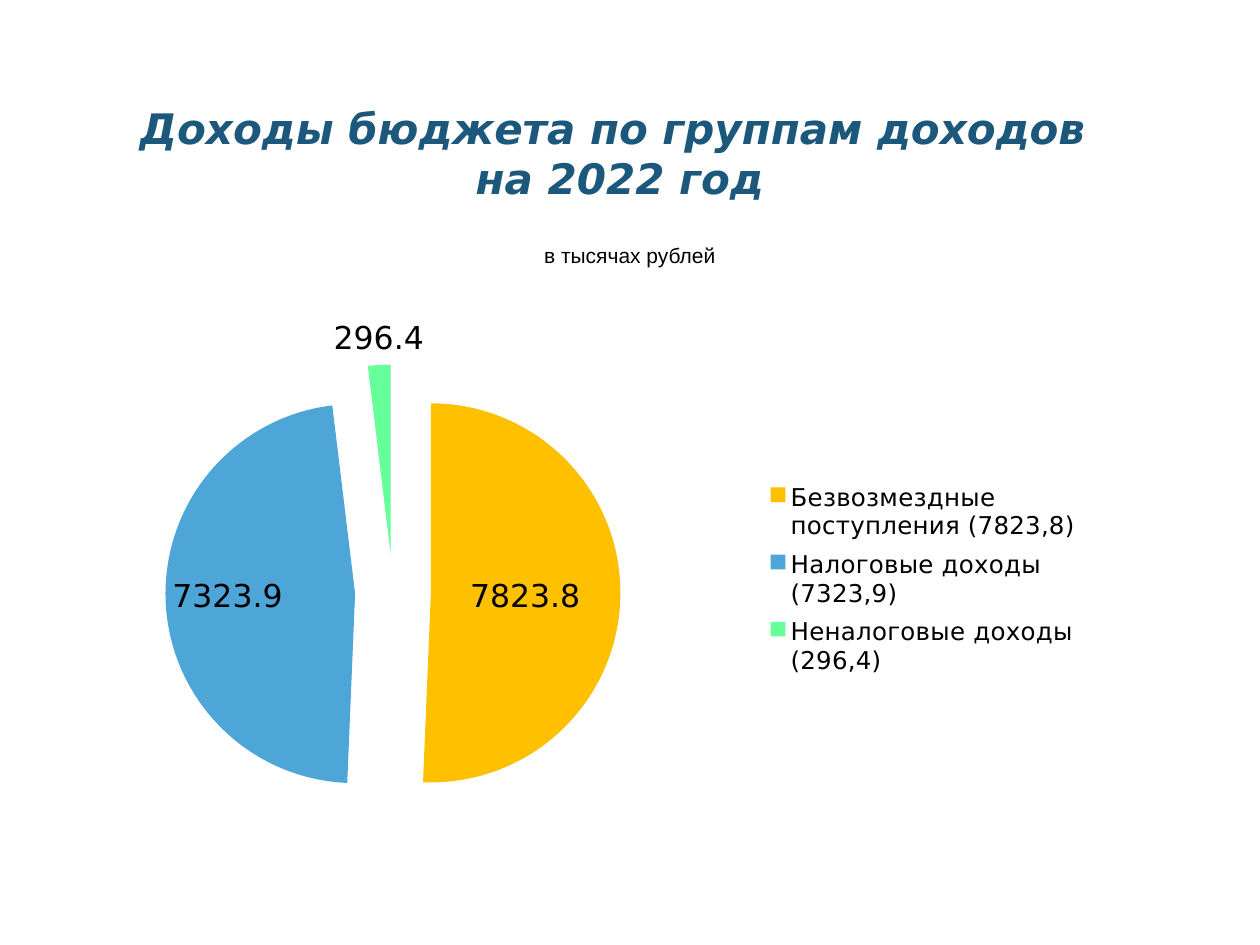
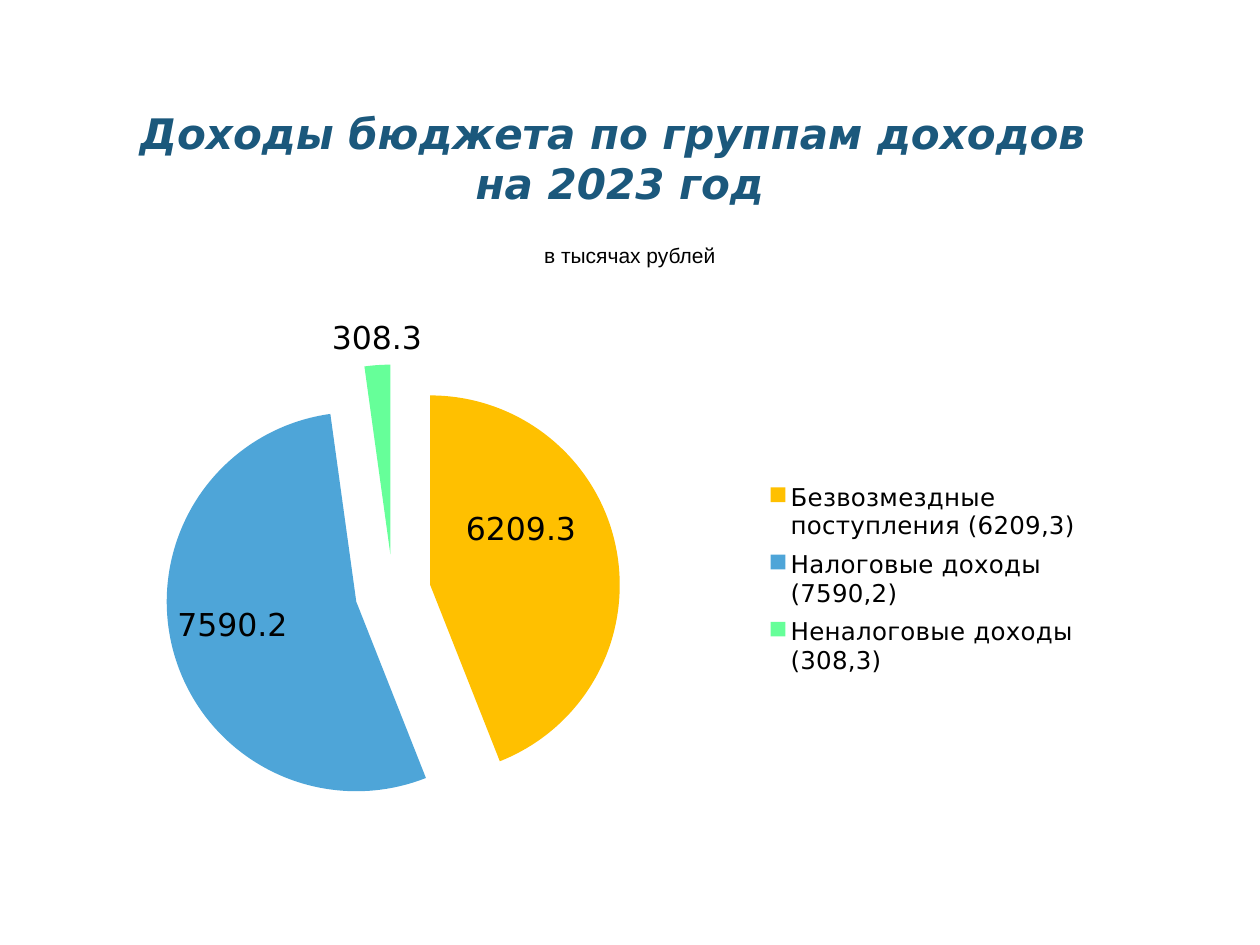
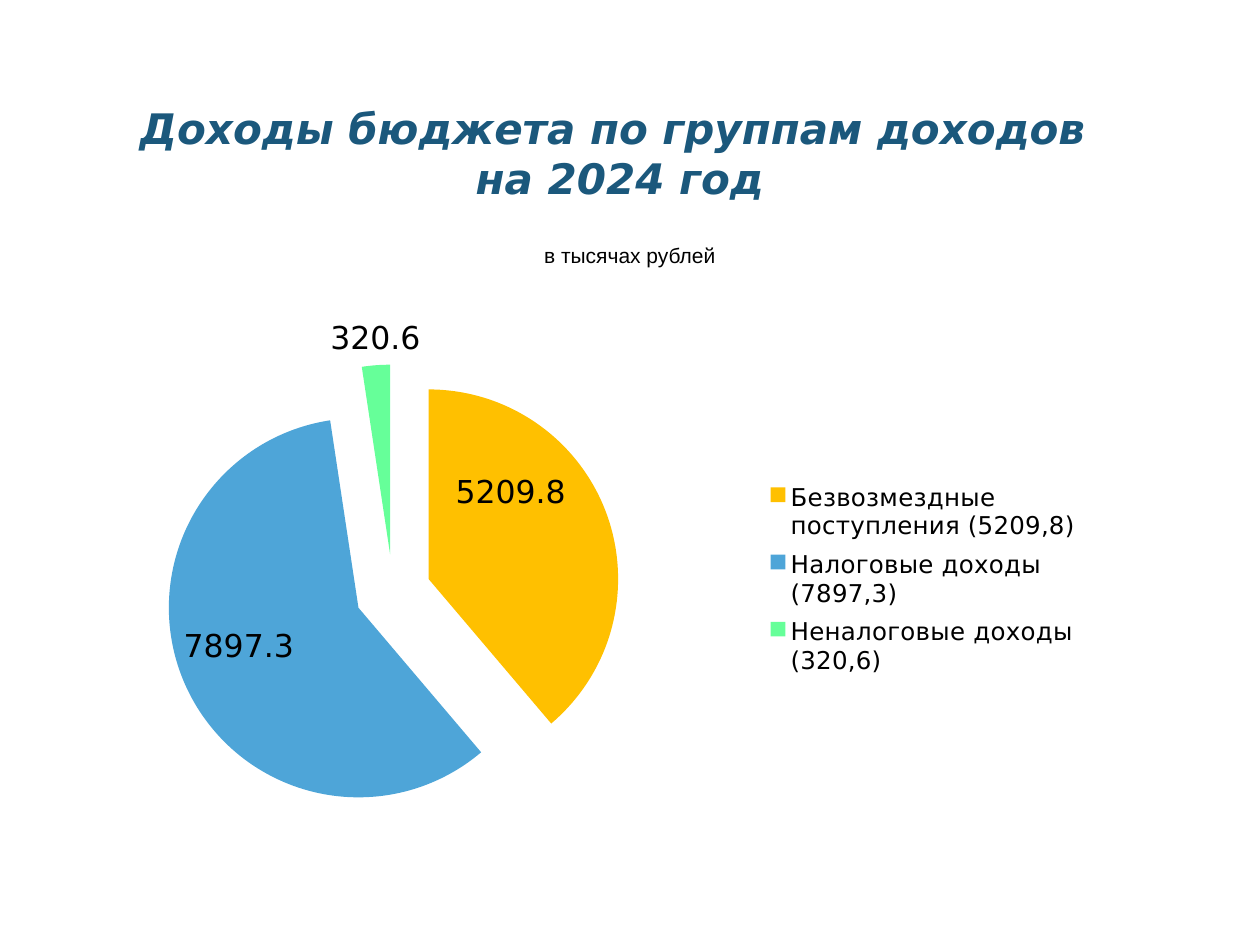
from collections import namedtuple

from lxml.etree import SubElement
from pptx import Presentation
from pptx.chart.data import CategoryChartData
from pptx.dml.color import RGBColor
from pptx.enum.chart import XL_CHART_TYPE as ChartType
from pptx.enum.chart import XL_LABEL_POSITION as LabelPosition
from pptx.enum.chart import XL_LEGEND_POSITION as LegendPosition
from pptx.enum.text import MSO_ANCHOR as Anchor
from pptx.enum.text import MSO_AUTO_SIZE as AutoSize
from pptx.enum.text import PP_ALIGN as Align
from pptx.oxml.ns import qn
from pptx.util import Cm, Pt

Box = namedtuple("Box", "left top width height")
Budget = namedtuple("Budget", "year incomes heading_height")

BLACK = RGBColor(0x00, 0x00, 0x00)
HEADING_BLUE = RGBColor(0x1B, 0x58, 0x7C)
GRANTS_GOLD = RGBColor(0xFF, 0xC0, 0x00)
TAX_BLUE = RGBColor(0x4E, 0xA5, 0xD8)
NON_TAX_GREEN = RGBColor(0x66, 0xFF, 0x99)

HEADING_FONT = "DejaVu Sans"
CAPTION_FONT = "Arial"
EXPLOSION = 20

GROUPS = (
    ("Безвозмездные поступления", GRANTS_GOLD),
    ("Налоговые доходы", TAX_BLUE),
    ("Неналоговые доходы", NON_TAX_GREEN),
)
BUDGETS = (
    Budget(2022, (7823.8, 7323.9, 296.4), 4.17),
    Budget(2023, (6209.3, 7590.2, 308.3), 4.37),
    Budget(2024, (5209.8, 7897.3, 320.6), 4.17),
)


def set_font(font, name, size, color=BLACK, bold=False, italic=False):
    """Apply one complete character format."""
    font.name = name
    font.size = Pt(size)
    font.color.rgb = color
    font.bold = bold
    font.italic = italic


def write_text(frame, lines, align=Align.LEFT, anchor=Anchor.TOP, wrap=True,
               auto_size=AutoSize.NONE, **font_format):
    """Fill a text frame with one formatted paragraph per line."""
    frame.auto_size = auto_size
    frame.word_wrap = wrap
    frame.vertical_anchor = anchor
    for index, line in enumerate(lines):
        paragraph = frame.add_paragraph() if index else frame.paragraphs[0]
        paragraph.alignment = align
        paragraph.space_before = Pt(0)
        run = paragraph.add_run()
        run.text = line
        set_font(run.font, **font_format)


def add_manual_layout(layout, **values):
    """Put a manual layout into a chart layout element."""
    manual = SubElement(layout, qn("c:manualLayout"))
    for tag, value in values.items():
        SubElement(manual, qn(f"c:{tag}")).set("val", str(value))


def new_layout_after(sibling):
    """Insert an empty layout element behind its sibling."""
    layout = SubElement(sibling.getparent(), qn("c:layout"))
    sibling.addnext(layout)
    return layout


def place_heading(slide, box, year):
    """Format the title placeholder as the rounded heading for a year."""
    heading = slide.shapes.title
    heading.left, heading.top, heading.width, heading.height = box
    outline = SubElement(heading._element.spPr, qn("a:prstGeom"))
    outline.set("prst", "roundRect")
    SubElement(outline, qn("a:avLst"))
    write_text(
        heading.text_frame,
        ("Доходы бюджета по группам доходов ", f"на {year} год"),
        align=Align.CENTER, anchor=Anchor.MIDDLE,
        name=HEADING_FONT, size=24, color=HEADING_BLUE, bold=True, italic=True,
    )


def place_units(slide, box):
    """Add the caption with the unit of measure."""
    units = slide.shapes.add_textbox(*box)
    write_text(units.text_frame, ("в тысячах рублей",), wrap=False,
               auto_size=AutoSize.SHAPE_TO_FIT_TEXT, name=CAPTION_FONT, size=12)


def place_income_pie(slide, box, budget):
    """Add the exploded pie of income groups with its legend."""
    data = CategoryChartData()
    data.categories = [
        f"{group} ({income})".replace(".", ",")
        for (group, _), income in zip(GROUPS, budget.incomes)
    ]
    data.add_series("Series 1", budget.incomes)
    chart = slide.shapes.add_chart(ChartType.PIE, *box, data).chart
    chart.has_title = False
    set_font(chart.font, HEADING_FONT, 18)

    plot = chart.plots[0]
    plot.vary_by_categories = True
    incomes = plot.series[0]
    series_name = incomes._element.find(qn("c:tx"))
    explosion = SubElement(incomes._element, qn("c:explosion"))
    explosion.set("val", str(EXPLOSION))
    series_name.addnext(explosion)
    for index, (_, color) in enumerate(GROUPS):
        fill = incomes.points[index].format.fill
        fill.solid()
        fill.fore_color.rgb = color

    labels = incomes.data_labels
    labels.show_value = True
    labels.position = LabelPosition.BEST_FIT
    set_font(labels.font, HEADING_FONT, 18)
    grants_label = incomes.points[0].data_label
    set_font(grants_label.font, HEADING_FONT, 18)
    grants_label.position = LabelPosition.BEST_FIT
    label_index = labels._element.find(f"{qn('c:dLbl')}/{qn('c:idx')}")
    add_manual_layout(new_layout_after(label_index), x=-0.14, y=0)

    chart.has_legend = True
    legend = chart.legend
    legend.position = LegendPosition.RIGHT
    legend.include_in_layout = False
    set_font(legend.font, HEADING_FONT, 14)
    for old_layout in legend._element.findall(qn("c:layout")):
        legend._element.remove(old_layout)
    add_manual_layout(
        new_layout_after(legend._element.find(qn("c:legendPos"))),
        xMode="edge", yMode="edge", x=0.63, y=0.31, w=0.29, h=0.39,
    )

    plot_area = plot._element.getparent()
    for old_layout in plot_area.findall(qn("c:layout")):
        plot_area.remove(old_layout)
    pie_layout = SubElement(plot_area, qn("c:layout"))
    plot_area.insert(0, pie_layout)
    add_manual_layout(pie_layout, layoutTarget="inner", xMode="edge",
                      yMode="edge", x=0.1, y=0.11, w=0.41, h=0.84)


def build_budget_slide(deck, budget):
    """Add the slide for one budget year."""
    slide = deck.slides.add_slide(deck.slide_layouts[5])
    place_heading(
        slide, Box(Cm(1.98), Cm(0.99), Cm(21.03), Cm(budget.heading_height)),
        budget.year,
    )
    place_income_pie(slide, Box(Cm(0.99), Cm(6.15), Cm(22.73), Cm(10.92)), budget)
    place_units(slide, Box(Cm(10.72), Cm(4.77), Cm(3.96), Cm(0.76)))


def main():
    """Build and save the budget slides."""
    deck = Presentation()
    deck.slide_width, deck.slide_height = Cm(25.4), Cm(19.05)
    for budget in BUDGETS:
        build_budget_slide(deck, budget)
    deck.save("out.pptx")


if __name__ == "__main__":
    main()
